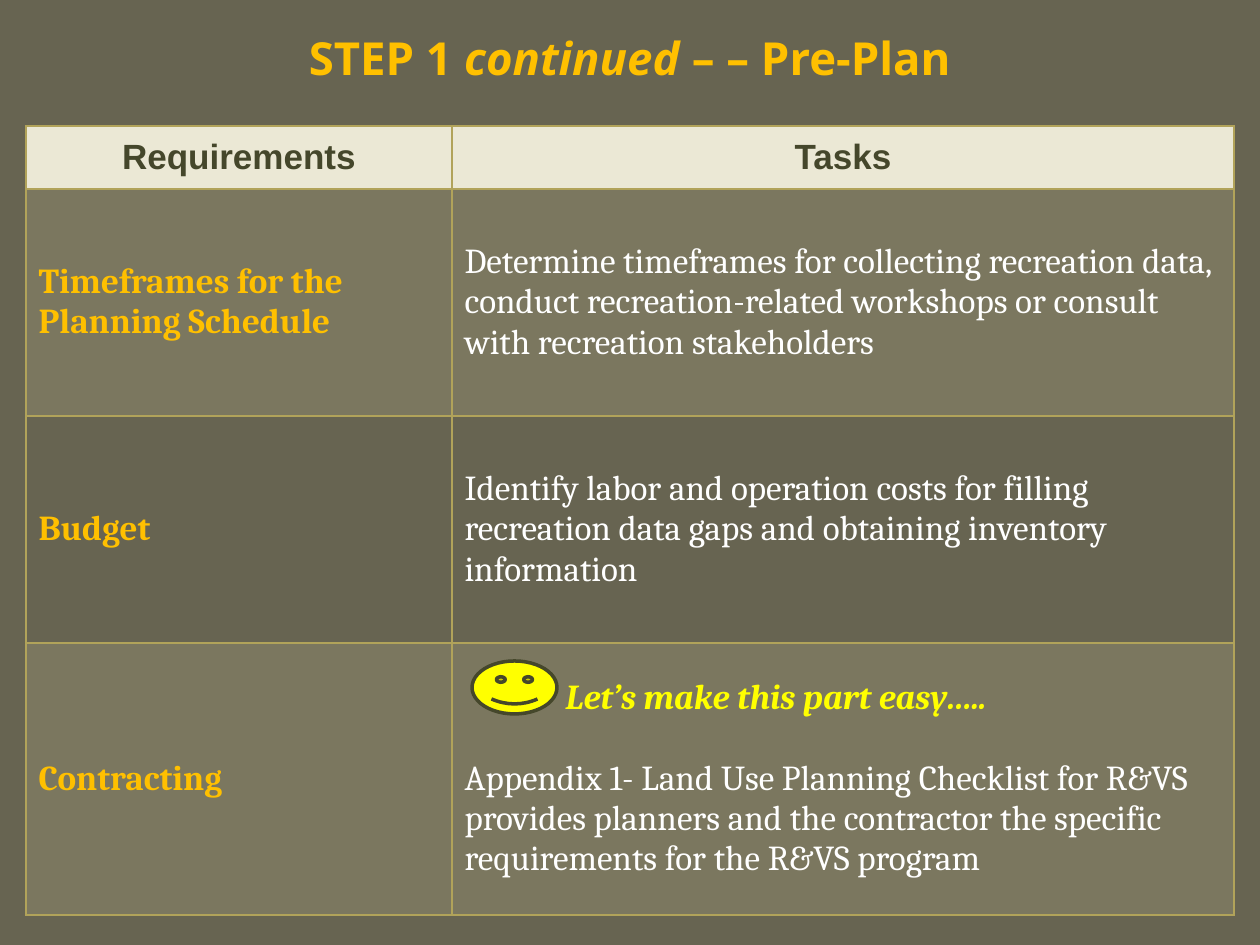
from dataclasses import dataclass
from typing import Optional

from lxml import etree
from pptx import Presentation
from pptx import util as u
from pptx.dml.color import RGBColor
from pptx.enum import shapes, text
from pptx.oxml import ns

PX_PER_INCH = 126

OLIVE = RGBColor(0x67, 0x64, 0x51)
CREAM = RGBColor(0xEB, 0xE8, 0xD5)
SAND = RGBColor(0xCE, 0xC5, 0x97)
DARK = RGBColor(0x45, 0x47, 0x2B)
GOLD = RGBColor(0xFF, 0xC0, 0x00)
YELLOW = RGBColor(0xFF, 0xFF, 0x00)
WHITE = RGBColor(0xFF, 0xFF, 0xFF)
BORDER = RGBColor(0xB1, 0xA3, 0x5A)

TITLE = dict(name="Open Sans", size=u.Pt(26), bold=True)
HEADING = dict(name="Arial", size=u.Pt(20), bold=True)
REQUIREMENT = dict(name="Cambria", size=u.Pt(20), bold=True)
TASK = dict(REQUIREMENT, bold=False)
REMARK = dict(REQUIREMENT, italic=True)

COLUMNS = (426, 782)
SMILEY_INDENT = 101


@dataclass
class Line:
    words: str
    style: dict
    color: RGBColor
    align: text.PP_ALIGN = text.PP_ALIGN.LEFT
    indent: int = 0
    after: int = 0


@dataclass
class Row:
    height: int
    cells: tuple[list[Line], list[Line]]
    fill: Optional[RGBColor] = None
    opacity: int = 100


def px(length: int) -> u.Emu:
    return u.Emu(round(length * u.Inches(1) / PX_PER_INCH))


def add_run(paragraph, words: str, style: dict, color: RGBColor) -> None:
    run = paragraph.add_run()
    run.text = words
    for key, value in style.items():
        setattr(run.font, key, value)
    run.font.color.rgb = color


def write_lines(frame, lines: list[Line]) -> None:
    for i, line in enumerate(lines):
        paragraph = frame.add_paragraph() if i else frame.paragraphs[0]
        paragraph.alignment = line.align
        paragraph.space_after = u.Pt(line.after)
        if line.indent:
            properties = paragraph._p.get_or_add_pPr()
            properties.set("marL", str(px(line.indent)))
            properties.set("indent", "0")
        add_run(paragraph, line.words, line.style, line.color)


def set_borders(cell) -> None:
    properties = cell._tc.get_or_add_tcPr()
    for side in ("lnL", "lnR", "lnT", "lnB"):
        border = etree.SubElement(properties, ns.qn(f"a:{side}"), w=str(u.Pt(1)))
        solid = etree.SubElement(border, ns.qn("a:solidFill"))
        etree.SubElement(solid, ns.qn("a:srgbClr"), val=str(BORDER))


def set_fill(cell, row: Row) -> None:
    if row.fill is None:
        cell.fill.background()
        return
    cell.fill.solid()
    cell.fill.fore_color.rgb = row.fill
    if row.opacity < 100:
        color = cell._tc.tcPr.find(f"{ns.qn('a:solidFill')}/{ns.qn('a:srgbClr')}")
        etree.SubElement(color, ns.qn("a:alpha"), val=str(row.opacity * 1000))


def add_title(slide) -> None:
    frame = slide.shapes.add_textbox(0, px(10), px(1260), px(95)).text_frame
    frame.word_wrap = True
    frame.vertical_anchor = text.MSO_ANCHOR.MIDDLE
    paragraph = frame.paragraphs[0]
    paragraph.alignment = text.PP_ALIGN.CENTER
    for words, italic in (("STEP 1 ", False), ("continued ", True), ("– – Pre-Plan", False)):
        add_run(paragraph, words, dict(TITLE, italic=italic), GOLD)


def add_plan_table(slide, rows: list[Row]) -> None:
    plan = slide.shapes.add_table(
        len(rows), len(COLUMNS), px(26), px(126),
        px(sum(COLUMNS)), px(sum(row.height for row in rows))).table
    plan.first_row = plan.horz_banding = False
    for column, width in zip(plan.columns, COLUMNS):
        column.width = px(width)
    for r, row in enumerate(rows):
        plan.rows[r].height = px(row.height)
        for c, lines in enumerate(row.cells):
            cell = plan.cell(r, c)
            cell.vertical_anchor = text.MSO_ANCHOR.MIDDLE
            set_borders(cell)
            set_fill(cell, row)
            write_lines(cell.text_frame, lines)


def add_smiley(slide) -> None:
    smiley = slide.shapes.add_shape(
        shapes.MSO_SHAPE.SMILEY_FACE, px(472), px(661), px(85), px(53))
    smiley.shadow.inherit = False
    smiley.fill.solid()
    smiley.fill.fore_color.rgb = YELLOW
    smiley.line.color.rgb = DARK
    smiley.line.width = u.Pt(2)


def heading(words: str) -> list[Line]:
    return [Line(words, HEADING, DARK, text.PP_ALIGN.CENTER)]


def requirement(words: str) -> list[Line]:
    return [Line(words, REQUIREMENT, GOLD)]


def task(words: str) -> list[Line]:
    return [Line(words, TASK, WHITE)]


ROWS = [
    Row(63, (heading("Requirements"), heading("Tasks")), CREAM),
    Row(227, (requirement("Timeframes for the Planning Schedule"),
              task("Determine timeframes for collecting recreation data, conduct "
                   "recreation-related workshops or consult with recreation "
                   "stakeholders")), SAND, 20),
    Row(227, (requirement("Budget"),
              task("Identify labor and operation costs for filling recreation data "
                   "gaps and obtaining inventory information"))),
    Row(272, (requirement("Contracting"),
              [Line("Let’s make this part easy…..", REMARK, YELLOW,
                    indent=SMILEY_INDENT, after=23)]
              + task("Appendix 1- Land Use Planning Checklist for R&VS provides "
                     "planners and the contractor the specific requirements for "
                     "the R&VS program")), SAND, 20),
]


def main() -> None:
    deck = Presentation()
    deck.slide_width, deck.slide_height = px(1260), px(945)
    slide = deck.slides.add_slide(deck.slide_layouts[6])
    slide.background.fill.solid()
    slide.background.fill.fore_color.rgb = OLIVE

    # Title, then the table with the smiley on its last row
    add_title(slide)
    add_plan_table(slide, ROWS)
    add_smiley(slide)
    deck.save("out.pptx")


if __name__ == "__main__":
    main()
